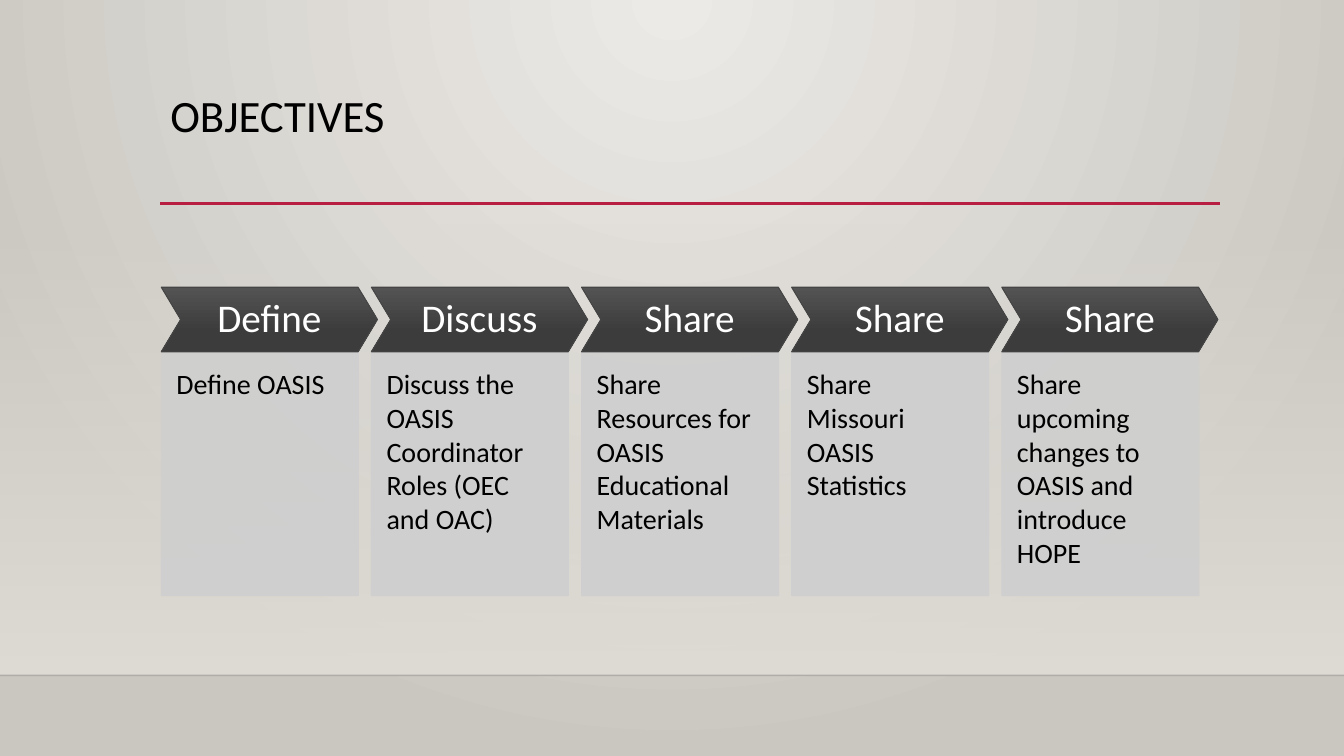
from lxml.etree import SubElement
from pptx import Presentation
from pptx.dml.color import RGBColor
from pptx.enum.shapes import MSO_CONNECTOR, MSO_SHAPE
from pptx.enum.text import MSO_ANCHOR, PP_ALIGN
from pptx.oxml import parse_xml
from pptx.oxml.ns import nsdecls, qn
from pptx.util import Inches, Pt

COLORS = {
    "glow": "ECEAE7",
    "edge": "CAC7C1",
    "wall": "DFDBD5",
    "floor_line": "000001",
    "accent": "B71E42",
    "chevron_top": "535353",
    "chevron_middle": "3C3C3C",
    "chevron_bottom": "393939",
    "chevron_line": "454545",
    "panel": "CFCFCF",
    "text": "000000",
    "light_text": "FFFFFF",
}
FONT = "Calibri"
DOWNWARD = '<a:lin ang="5400000" scaled="0"/>'
FROM_TOP = '<a:path path="circle"><a:fillToRect l="43000" t="0" r="43000" b="100000"/></a:path>'
OBJECTIVES = [
    ("Define", "Define OASIS"),
    ("Discuss", "Discuss the OASIS Coordinator Roles (OEC and OAC)"),
    ("Share", "Share Resources for OASIS Educational Materials"),
    ("Share", "Share Missouri OASIS Statistics"),
    ("Share", "Share upcoming changes to OASIS and introduce HOPE"),
]


def color(name):
    return RGBColor.from_string(COLORS[name])


def set_gradient(fill, element, stops, direction):
    fill.gradient()
    gradient = element.find(".//" + qn("a:gradFill"))
    for child in list(gradient):
        gradient.remove(child)
    stop_xml = "".join(
        f'<a:gs pos="{position * 1000}"><a:srgbClr val="{COLORS[name]}">'
        f'<a:alpha val="{alpha * 1000}"/></a:srgbClr></a:gs>'
        for position, name, alpha in stops
    )
    source = parse_xml(
        f'<a:gradFill {nsdecls("a")}><a:gsLst>{stop_xml}</a:gsLst>{direction}</a:gradFill>'
    )
    gradient.extend(list(source))


def set_opacity(element, percent):
    for color_element in element.iter(qn("a:srgbClr")):
        SubElement(color_element, qn("a:alpha"), val=str(percent * 1000))


def add_box(slide, kind, left, top, width, height):
    shape = slide.shapes.add_shape(
        kind, Inches(left), Inches(top), Inches(width), Inches(height)
    )
    shape.shadow.inherit = False
    return shape


def add_rule(slide, left, top, width, name, weight):
    line = slide.shapes.add_connector(
        MSO_CONNECTOR.STRAIGHT,
        Inches(left), Inches(top), Inches(left + width), Inches(top),
    )
    line.line.color.rgb = color(name)
    line.line.width = Pt(weight)
    SubElement(line.element.spPr, qn("a:effectLst"))
    return line


def set_text(shape, text, size, name, margins, anchor=MSO_ANCHOR.TOP,
             alignment=PP_ALIGN.LEFT, spacing=1.0):
    frame = shape.text_frame
    frame.text = text
    frame.word_wrap = True
    frame.vertical_anchor = anchor
    (frame.margin_left, frame.margin_top,
     frame.margin_right, frame.margin_bottom) = map(Inches, margins)
    paragraph = frame.paragraphs[0]
    paragraph.alignment = alignment
    paragraph.line_spacing = spacing
    font = paragraph.runs[0].font
    font.name = FONT
    font.size = Pt(size)
    font.color.rgb = color(name)


def add_backdrop(slide, width, floor):
    set_gradient(slide.background.fill, slide.element,
                 [(0, "glow", 100), (100, "edge", 100)], FROM_TOP)
    wall = add_box(slide, MSO_SHAPE.RECTANGLE, 0, 2.21, width, floor - 2.21)
    set_gradient(wall.fill, wall.element, [(0, "wall", 0), (100, "wall", 100)], DOWNWARD)
    wall.line.fill.background()
    floor_line = add_rule(slide, 0, floor, width, "floor_line", 1)
    set_opacity(floor_line.element.spPr, 20)


def add_title(slide, left, top, width, height):
    add_rule(slide, left, top + height, width, "accent", 2.5)
    title = slide.shapes.add_textbox(
        Inches(left), Inches(top), Inches(width), Inches(height)
    )
    set_text(title, "OBJECTIVES", 32, "text", (0.1, 0.05, 0.1, 0.05), spacing=0.9)


def add_objective(slide, left, top, width, heading, detail):
    header_height, panel_height, point = 0.64, 2.42, 0.19
    panel = add_box(slide, MSO_SHAPE.RECTANGLE, left, top + header_height, width, panel_height)
    panel.fill.solid()
    panel.fill.fore_color.rgb = color("panel")
    panel.line.color.rgb = color("panel")
    panel.line.width = Pt(0.75)
    set_opacity(panel.element.spPr, 90)
    set_text(panel, detail, 20, "text", (0.15, 0.15, 0.15, 0.31))

    chevron = add_box(slide, MSO_SHAPE.CHEVRON, left, top, width + point, header_height)
    chevron.adjustments[0] = 0.3
    set_gradient(
        chevron.fill, chevron.element,
        [(0, "chevron_top", 100), (69, "chevron_middle", 100), (100, "chevron_bottom", 100)],
        DOWNWARD,
    )
    chevron.line.color.rgb = color("chevron_line")
    chevron.line.width = Pt(0.75)
    set_text(chevron, heading, 28, "light_text", (0, 0, 0, 0),
             MSO_ANCHOR.MIDDLE, PP_ALIGN.CENTER, 0.9)


def add_objectives(slide, left, top, width):
    point, gap = 0.19, 0.13
    count = len(OBJECTIVES)
    column = (width - point - gap * (count - 1)) / count
    for index, (heading, detail) in enumerate(OBJECTIVES):
        add_objective(slide, left + index * (column + gap), top, column, heading, detail)


def main():
    presentation = Presentation()
    presentation.slide_width = Inches(13.33)
    presentation.slide_height = Inches(7.5)
    slide = presentation.slides.add_slide(presentation.slide_layouts[6])
    add_backdrop(slide, 13.33, 6.7)
    add_title(slide, 1.59, 0.88, 10.51, 1.14)
    add_objectives(slide, 1.6, 2.85, 10.48)
    presentation.save("out.pptx")


if __name__ == "__main__":
    main()
